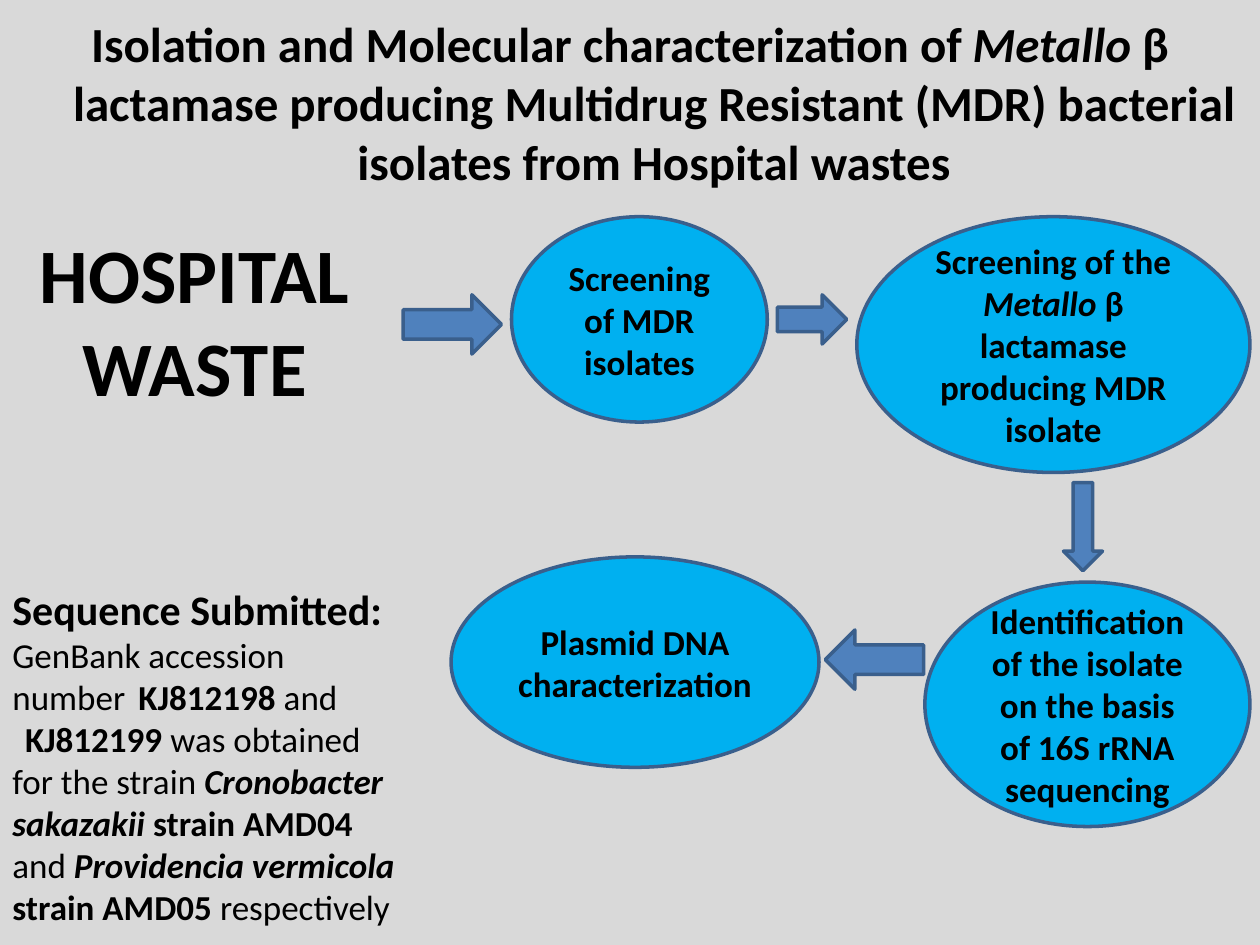
import pptx
import pptx.util
import pptx.dml.color
import pptx.enum.shapes
import pptx.enum.text
import pptx.oxml.ns
from lxml import etree

Shape = pptx.enum.shapes.MSO_SHAPE
Align = pptx.enum.text.PP_ALIGN
Anchor = pptx.enum.text.MSO_ANCHOR

COLORS = {"background": "D9D9D9", "step": "00B0F0", "arrow": "4F81BD",
          "outline": "3A5F8C", "text": "000000"}
FONT = "Calibri"
COLUMNS, ROWS = 100, 75  # square grid over the slide

# Content: a paragraph is a list of (text, style) runs; b = bold, i = italic
TITLE = [[("Isolation and Molecular characterization of ", "b"), ("Metallo ", "bi"),
          ("β lactamase producing Multidrug Resistant (MDR) bacterial "
           "isolates from Hospital wastes", "b")]]
SOURCE = [[("HOSPITAL WASTE", "b")]]
HEADING = [("Sequence Submitted:", "b")]
ACCESSION = [("GenBank accession number", ""), ("\tKJ812198 ", "b"), ("and", "")]
STRAINS = [("KJ812199 ", "b"), ("was obtained for the strain ", ""),
           ("Cronobacter sakazakii ", "bi"), ("strain AMD04 ", "b"), ("and ", ""),
           ("Providencia vermicola ", "bi"), ("strain AMD05 ", "b"), ("respectively", "")]

# Steps: paragraphs, then left, top, width, height in grid units
STEPS = [
    ([[("Screening of MDR isolates", "b")]], (40.6, 17.2, 20.3, 16.3)),
    ([[("Screening of the ", "b"), ("Metallo ", "bi"),
       ("β lactamase producing MDR isolate", "b")]], (68, 17.2, 31.2, 20.3)),
    ([[("Identification of the isolate on the basis of 16S rRNA sequencing", "b")]],
     (73.4, 46.2, 25.8, 19.4)),
    ([[("Plasmid DNA", "b")], [("characterization", "b")]], (35.8, 44.2, 29.2, 16.7)),
]
# Arrows: preset, box, rotation
ARROWS = [
    (Shape.RIGHT_ARROW, (32, 23.4, 7.8, 4.7), 0),
    (Shape.RIGHT_ARROW, (61.7, 23.4, 5.5, 3.9), 0),
    (Shape.DOWN_ARROW, (84.4, 38.3, 3.1, 7), 0),
    (Shape.RIGHT_ARROW, (65.5, 50, 7.8, 4.7), 180),
]

presentation = pptx.Presentation()
presentation.slide_width = pptx.util.Inches(10)
presentation.slide_height = pptx.util.Inches(7.5)
slide = presentation.slides.add_slide(presentation.slide_layouts[6])


def color(name):
    return pptx.dml.color.RGBColor.from_string(COLORS[name])


def place(box):
    """Turn grid units into slide lengths."""
    across = presentation.slide_width / COLUMNS
    down = presentation.slide_height / ROWS
    left, top, width, height = box
    return (round(left * across), round(top * down),
            round(width * across), round(height * down))


def write(shape, paragraphs, sizes, align=Align.CENTER, anchor=Anchor.TOP):
    """Fill a shape with styled runs; sizes holds one point size per paragraph."""
    frame = shape.text_frame
    frame.word_wrap = True
    frame.vertical_anchor = anchor
    for index, (runs, size) in enumerate(zip(paragraphs, sizes)):
        paragraph = frame.paragraphs[0] if index == 0 else frame.add_paragraph()
        paragraph.alignment = align
        for text, style in runs:
            run = paragraph.add_run()
            run.text = text
            run.font.name = FONT
            run.font.size = pptx.util.Pt(size)
            run.font.bold = "b" in style
            run.font.italic = "i" in style
            run.font.color.rgb = color("text")
    return frame.paragraphs


def indent(paragraph, first, margin=0):
    properties = paragraph._p.get_or_add_pPr()
    properties.set("marL", str(pptx.util.Inches(margin)))
    properties.set("indent", str(pptx.util.Inches(first)))
    return properties


def add_text(box, paragraphs, sizes, **layout):
    return write(slide.shapes.add_textbox(*place(box)), paragraphs, sizes, **layout)


def add_figure(preset, box, fill, rotation=0):
    shape = slide.shapes.add_shape(preset, *place(box))
    shape.shadow.inherit = False
    shape.rotation = rotation
    shape.fill.solid()
    shape.fill.fore_color.rgb = color(fill)
    shape.line.color.rgb = color("outline")
    shape.line.width = pptx.util.Pt(2)
    return shape


# Background and title
slide.background.fill.solid()
slide.background.fill.fore_color.rgb = color("background")
title = add_text((0, 0.6, 100, 16), TITLE, [28])
indent(title[0], -0.38, margin=0.38)

# Flow of steps
for paragraphs, box in STEPS:
    write(add_figure(Shape.OVAL, box, "step"), paragraphs, [20] * len(paragraphs),
          anchor=Anchor.MIDDLE)
for preset, box, rotation in ARROWS:
    add_figure(preset, box, "arrow", rotation)

# Starting point and submitted sequences
add_text((1.7, 17.5, 27.5, 15.8), SOURCE, [44])
notes = add_text((0, 45.8, 32.5, 28.6), [HEADING, ACCESSION, STRAINS], [24, 20, 20],
                 align=Align.LEFT)
tabs = etree.SubElement(indent(notes[1], 0), pptx.oxml.ns.qn("a:tabLst"))
etree.SubElement(tabs, pptx.oxml.ns.qn("a:tab"),
                 pos=str(pptx.util.Inches(1.15)), algn="l")
indent(notes[2], 0.1)

presentation.save("out.pptx")
